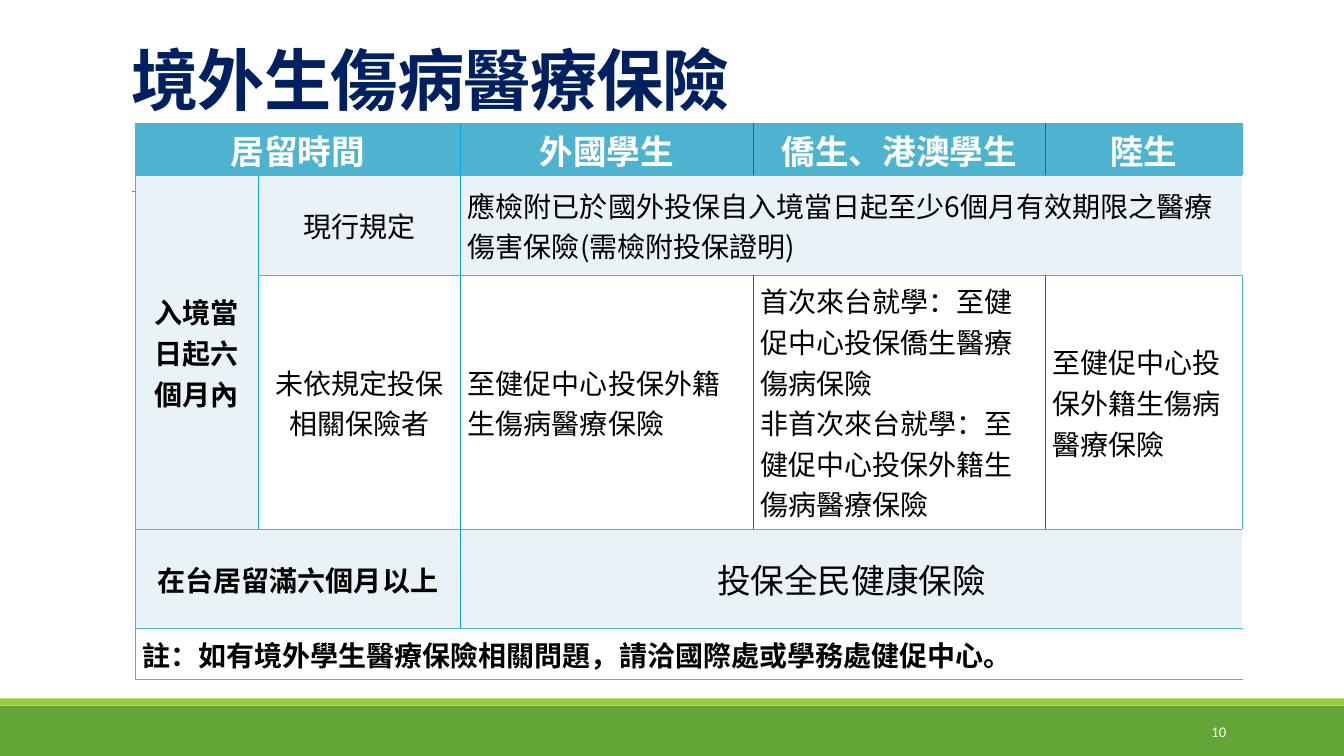
from dataclasses import dataclass
from itertools import product

from lxml.etree import SubElement
from pptx import Presentation
from pptx.dml.color import RGBColor
from pptx.enum.shapes import MSO_CONNECTOR, MSO_SHAPE
from pptx.enum.text import MSO_ANCHOR, PP_ALIGN
from pptx.oxml.ns import qn
from pptx.util import Inches, Pt

COLOURS = {
    "navy": "002060", "teal": "4EB3CF", "pale": "E9F2F6", "white": "FFFFFF",
    "black": "000000", "grey": "808080", "green": "63A537", "lime": "99CB38",
    "sky": "08A5EF", "blue": "056EA0",
}
CJK_FONT = "Noto Sans CJK SC"
WIDTH, HEIGHT = 13.33, 7.5
COLUMN_WIDTHS = [1.22, 2.01, 2.9, 2.9, 1.95]
ROW_HEIGHTS = [0.51, 0.99, 2.52, 0.99, 0.5]
COLUMN_EDGES = ["teal", "sky", "sky", "blue", "blue", "teal"]


@dataclass
class Band:
    top: float
    height: float
    colour: str


@dataclass
class Entry:
    row: int
    column: int
    text: str
    fill: str = "white"
    rows: int = 1
    columns: int = 1
    size: float = 20
    bold: bool = False
    colour: str = "black"
    align: PP_ALIGN = PP_ALIGN.LEFT


@dataclass
class Heading(Entry):
    fill: str = "teal"
    size: float = 24
    bold: bool = True
    colour: str = "white"
    align: PP_ALIGN = PP_ALIGN.CENTER


BANDS = [Band(7, 0.5, "green"), Band(6.93, 0.07, "lime")]
CENTER = PP_ALIGN.CENTER
ENTRIES = [
    Heading(0, 0, "居留時間", columns=2),
    Heading(0, 2, "外國學生"),
    Heading(0, 3, "僑生、港澳學生"),
    Heading(0, 4, "陸生"),
    Entry(1, 0, "入境當日起六個月內", "pale", rows=2, bold=True, align=CENTER),
    Entry(1, 1, "現行規定", "pale", align=CENTER),
    Entry(1, 2, "應檢附已於國外投保自入境當日起至少6個月有效期限之醫療傷害保險(需檢附投保證明)",
          "pale", columns=3),
    Entry(2, 1, "未依規定投保相關保險者", align=CENTER),
    Entry(2, 2, "至健促中心投保外籍生傷病醫療保險"),
    Entry(2, 3, "首次來台就學：至健促中心投保僑生醫療傷病保險\n"
                "非首次來台就學：至健促中心投保外籍生傷病醫療保險"),
    Entry(2, 4, "至健促中心投保外籍生傷病醫療保險"),
    Entry(3, 0, "在台居留滿六個月以上", "pale", columns=2, bold=True, align=CENTER),
    Entry(3, 2, "投保全民健康保險", "pale", columns=3, size=24, align=CENTER),
    Entry(4, 0, "註：如有境外學生醫療保險相關問題，請洽國際處或學務處健促中心。",
          columns=5, bold=True),
]


def rgb(name: str) -> RGBColor:
    return RGBColor.from_string(COLOURS[name])


def format_paragraph(paragraph, size: float, colour: str, bold: bool,
                     align: PP_ALIGN, name: str = CJK_FONT) -> None:
    paragraph.alignment = align
    font = paragraph.font
    font.size, font.bold, font.name = Pt(size), bold, name
    font.color.rgb = rgb(colour)
    properties = paragraph._p.pPr.find(qn("a:defRPr"))
    SubElement(properties, qn("a:ea"), typeface=name)


def add_border(cell, side: str, colour: str) -> None:
    line = SubElement(cell._tc.get_or_add_tcPr(), qn(f"a:ln{side}"), w=str(Pt(1)))
    fill = SubElement(line, qn("a:solidFill"))
    SubElement(fill, qn("a:srgbClr"), val=COLOURS[colour])


def draw_background(slide) -> None:
    for band in BANDS:
        shape = slide.shapes.add_shape(MSO_SHAPE.RECTANGLE, 0, Inches(band.top),
                                       Inches(WIDTH), Inches(band.height))
        shape.shadow.inherit = False
        shape.fill.solid()
        shape.fill.fore_color.rgb = rgb(band.colour)
        shape.line.fill.background()
    rule = slide.shapes.add_connector(MSO_CONNECTOR.STRAIGHT, Inches(1.31), Inches(1.9),
                                      Inches(12.21), Inches(1.9))
    rule.line.color.rgb = rgb("grey")
    rule.line.width = Pt(0.5)
    SubElement(rule._element.spPr, qn("a:effectLst"))


def draw_title(slide) -> None:
    title = slide.shapes.title
    title.left, title.top = Inches(1.2), Inches(0.31)
    title.width, title.height = Inches(11), Inches(0.92)
    frame = title.text_frame
    frame.text = "境外生傷病醫療保險"
    frame.vertical_anchor = MSO_ANCHOR.BOTTOM
    paragraph = frame.paragraphs[0]
    paragraph.line_spacing = 0.85
    format_paragraph(paragraph, 48, "navy", True, PP_ALIGN.LEFT)
    paragraph._p.pPr.find(qn("a:defRPr")).set("spc", "-50")


def draw_page_number(slide) -> None:
    box = slide.shapes.add_textbox(Inches(10.83), Inches(7.06), Inches(1.43), Inches(0.4))
    frame = box.text_frame
    frame.word_wrap = True
    frame.vertical_anchor = MSO_ANCHOR.MIDDLE
    frame.text = "10"
    format_paragraph(frame.paragraphs[0], 10.5, "white", False, PP_ALIGN.RIGHT, "Calibri")


def draw_entry(table, entry: Entry) -> None:
    last_row = entry.row + entry.rows - 1
    last_column = entry.column + entry.columns - 1
    cell = table.cell(entry.row, entry.column)
    if entry.rows * entry.columns > 1:
        cell.merge(table.cell(last_row, last_column))
    for row, column in product(range(entry.row, last_row + 1),
                               range(entry.column, last_column + 1)):
        part = table.cell(row, column)
        if column == entry.column:
            add_border(part, "L", COLUMN_EDGES[column])
        if column == last_column or part is cell:
            add_border(part, "R", COLUMN_EDGES[last_column + 1])
        if row == entry.row:
            add_border(part, "T", "teal")
        if row == last_row:
            add_border(part, "B", "teal")
        part.fill.solid()
        part.fill.fore_color.rgb = rgb(entry.fill)
    cell.vertical_anchor = MSO_ANCHOR.MIDDLE
    cell.margin_left = cell.margin_right = Inches(0.07)
    cell.margin_top = cell.margin_bottom = 0
    cell.text_frame.text = entry.text
    for paragraph in cell.text_frame.paragraphs:
        format_paragraph(paragraph, entry.size, entry.colour, entry.bold, entry.align)


def draw_insurance_table(slide) -> None:
    frame = slide.shapes.add_table(len(ROW_HEIGHTS), len(COLUMN_WIDTHS), Inches(1.34),
                                   Inches(1.23), Inches(sum(COLUMN_WIDTHS)),
                                   Inches(sum(ROW_HEIGHTS)))
    table = frame.table
    table.first_row = table.horz_banding = False
    for column, width in zip(table.columns, COLUMN_WIDTHS):
        column.width = Inches(width)
    for row, height in zip(table.rows, ROW_HEIGHTS):
        row.height = Inches(height)
    for entry in ENTRIES:
        draw_entry(table, entry)


def main() -> None:
    presentation = Presentation()
    presentation.slide_width, presentation.slide_height = Inches(WIDTH), Inches(HEIGHT)
    slide = presentation.slides.add_slide(presentation.slide_layouts[5])
    draw_background(slide)
    draw_title(slide)
    draw_page_number(slide)
    draw_insurance_table(slide)
    presentation.save("out.pptx")


if __name__ == "__main__":
    main()
